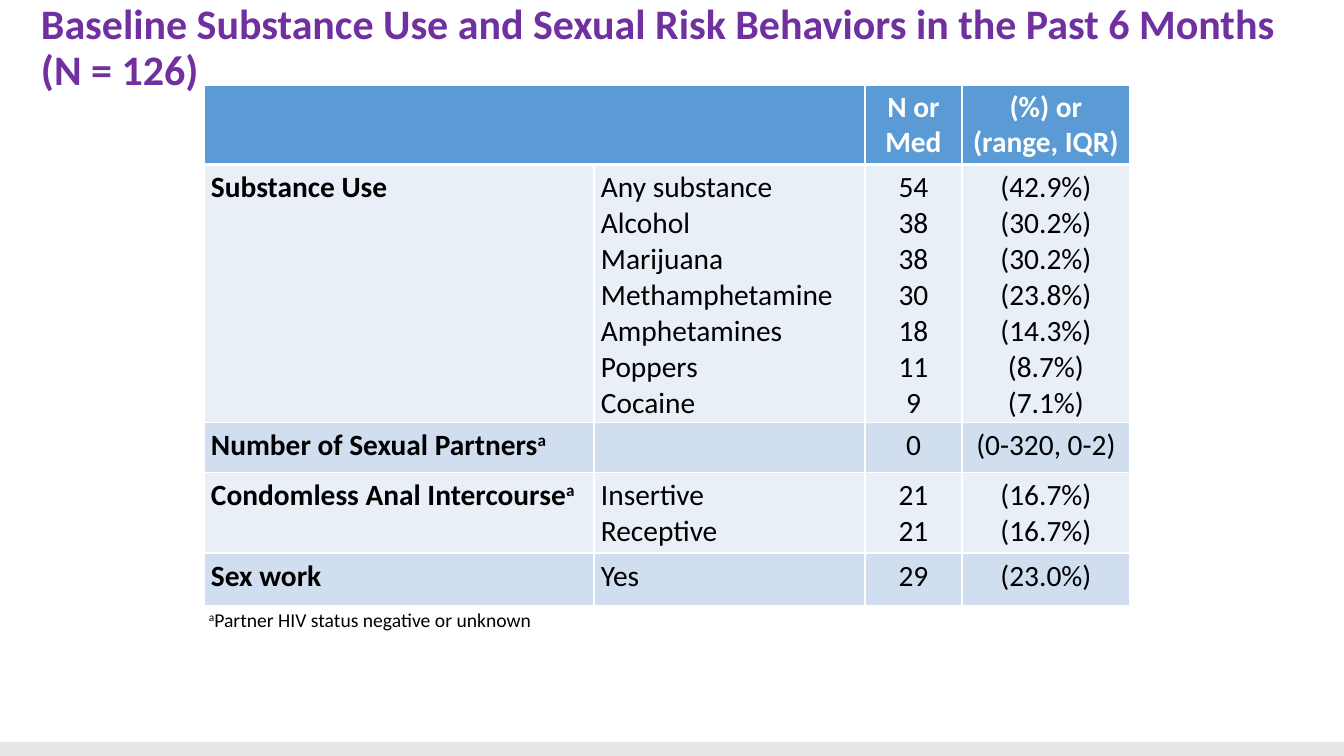
from lxml.etree import SubElement
from pptx import Presentation
from pptx.dml.color import RGBColor
from pptx.enum.shapes import MSO_SHAPE as Shape
from pptx.enum.text import MSO_ANCHOR as Anchor, MSO_AUTO_SIZE as AutoSize, PP_ALIGN as Align
from pptx.oxml.ns import qn
from pptx.util import Emu, Pt

PURPLE, BLACK, WHITE = "7030A0", "000000", "FFFFFF"
HEADER_BLUE, BAND_LIGHT, BAND_DARK, FOOTER_GREY = "5B9BD5", "E9EFF7", "D1DEEF", "E7E6E6"

TITLE = "Baseline Substance Use and Sexual Risk Behaviors in the Past 6 Months (N = 126)"
FOOTNOTE = "^a^Partner HIV status negative or unknown"
COLUMN_WIDTHS = [390, 271, 97, 168]
ROW_HEIGHTS = [79, 258, 50, 80, 53]
HEADER = [[], [], ["N or Med"], ["(%) or", "(range, IQR)"]]
BEHAVIORS = [
    ("Substance Use", [
        ("Any substance", "54", "(42.9%)"),
        ("Alcohol", "38", "(30.2%)"),
        ("Marijuana", "38", "(30.2%)"),
        ("Methamphetamine", "30", "(23.8%)"),
        ("Amphetamines", "18", "(14.3%)"),
        ("Poppers", "11", "(8.7%)"),
        ("Cocaine", "9", "(7.1%)"),
    ]),
    ("Number of Sexual Partners^a^", [("", "0", "(0-320, 0-2)")]),
    ("Condomless Anal Intercourse^a^", [
        ("Insertive", "21", "(16.7%)"),
        ("Receptive", "21", "(16.7%)"),
    ]),
    ("Sex work", [("Yes", "29", "(23.0%)")]),
]


def px(length):
    return Emu(round(length * 914400 / 100.8))


def rgb(hex_color):
    return RGBColor.from_string(hex_color)


class SlideBuilder:
    font_name = "Calibri"
    cell_size = 21
    thin_line, thick_line = 0.96, 3

    def __init__(self, slide):
        self.slide = slide

    def bar(self, left, top, width, height, color):
        bar = self.slide.shapes.add_shape(
            Shape.RECTANGLE, px(left), px(top), px(width), px(height))
        bar.shadow.inherit = False
        bar.fill.solid()
        bar.fill.fore_color.rgb = rgb(color)
        bar.line.fill.background()

    def add_runs(self, paragraph, text, size, color, bold=False):
        """Add text run by run; a part between carets is superscript."""
        for index, part in enumerate(text.split("^")):
            if not part:
                continue
            run = paragraph.add_run()
            run.text = part
            run.font.name = self.font_name
            run.font.size = Pt(size)
            run.font.bold = bold
            run.font.color.rgb = rgb(color)
            if index % 2:
                run._r.get_or_add_rPr().set("baseline", "30000")

    def text_box(self, left, top, width, height, text, size, color, bold=False, wrap=True):
        box = self.slide.shapes.add_textbox(px(left), px(top), px(width), px(height))
        frame = box.text_frame
        frame.word_wrap = wrap
        self.add_runs(frame.paragraphs[0], text, size, color, bold)
        return frame

    def borders(self, cell, top, bottom):
        properties = cell._tc.get_or_add_tcPr()
        widths = {"lnL": self.thin_line, "lnR": self.thin_line, "lnT": top, "lnB": bottom}
        for side, width in widths.items():
            line = SubElement(properties, qn(f"a:{side}"), w=str(int(Pt(width))))
            SubElement(SubElement(line, qn("a:solidFill")), qn("a:srgbClr"), val=WHITE)

    def cell(self, cell, lines, fill, color, bold, align):
        cell.margin_left = cell.margin_right = px(7)
        cell.margin_top = cell.margin_bottom = px(5)
        cell.fill.solid()
        cell.fill.fore_color.rgb = rgb(fill)
        frame = cell.text_frame
        for index, line in enumerate(lines):
            paragraph = frame.add_paragraph() if index else frame.paragraphs[0]
            paragraph.alignment = align
            self.add_runs(paragraph, line, self.cell_size, color, bold)

    def table(self, left, top, widths, heights, rows):
        table = self.slide.shapes.add_table(
            len(rows), len(widths), px(left), px(top), px(sum(widths)), px(sum(heights))).table
        table.first_row = table.horz_banding = False
        for column, width in zip(table.columns, widths):
            column.width = px(width)
        for row, height in zip(table.rows, heights):
            row.height = px(height)
        for r, row in enumerate(rows):
            is_header = r == 0
            fill = HEADER_BLUE if is_header else (BAND_DARK, BAND_LIGHT)[r % 2]
            for c, lines in enumerate(row):
                cell = table.cell(r, c)
                self.borders(cell,
                             self.thick_line if r < 2 else self.thin_line,
                             self.thick_line if is_header else self.thin_line)
                self.cell(cell, lines, fill, WHITE if is_header else BLACK,
                          is_header or c == 0, Align.CENTER if c > 1 else Align.LEFT)
        table.cell(0, 0).merge(table.cell(0, 1))


def main():
    deck = Presentation()
    deck.slide_width, deck.slide_height = px(1344), px(756)
    builder = SlideBuilder(deck.slides.add_slide(deck.slide_layouts[6]))

    builder.bar(0, 742, 1344, 14, FOOTER_GREY)

    title = builder.text_box(31, 7, 1279, 84, TITLE, 30, PURPLE, bold=True)
    title.vertical_anchor = Anchor.MIDDLE
    title.margin_left = title.margin_right = title.margin_top = title.margin_bottom = px(10)
    title.paragraphs[0].line_spacing = 0.9

    footnote = builder.text_box(199, 603, 347, 34, FOOTNOTE, 14, BLACK, wrap=False)
    footnote.auto_size = AutoSize.SHAPE_TO_FIT_TEXT

    body = [[[behavior], *map(list, zip(*details))] for behavior, details in BEHAVIORS]
    builder.table(204, 84, COLUMN_WIDTHS, ROW_HEIGHTS, [HEADER, *body])

    deck.save("out.pptx")


if __name__ == "__main__":
    main()
